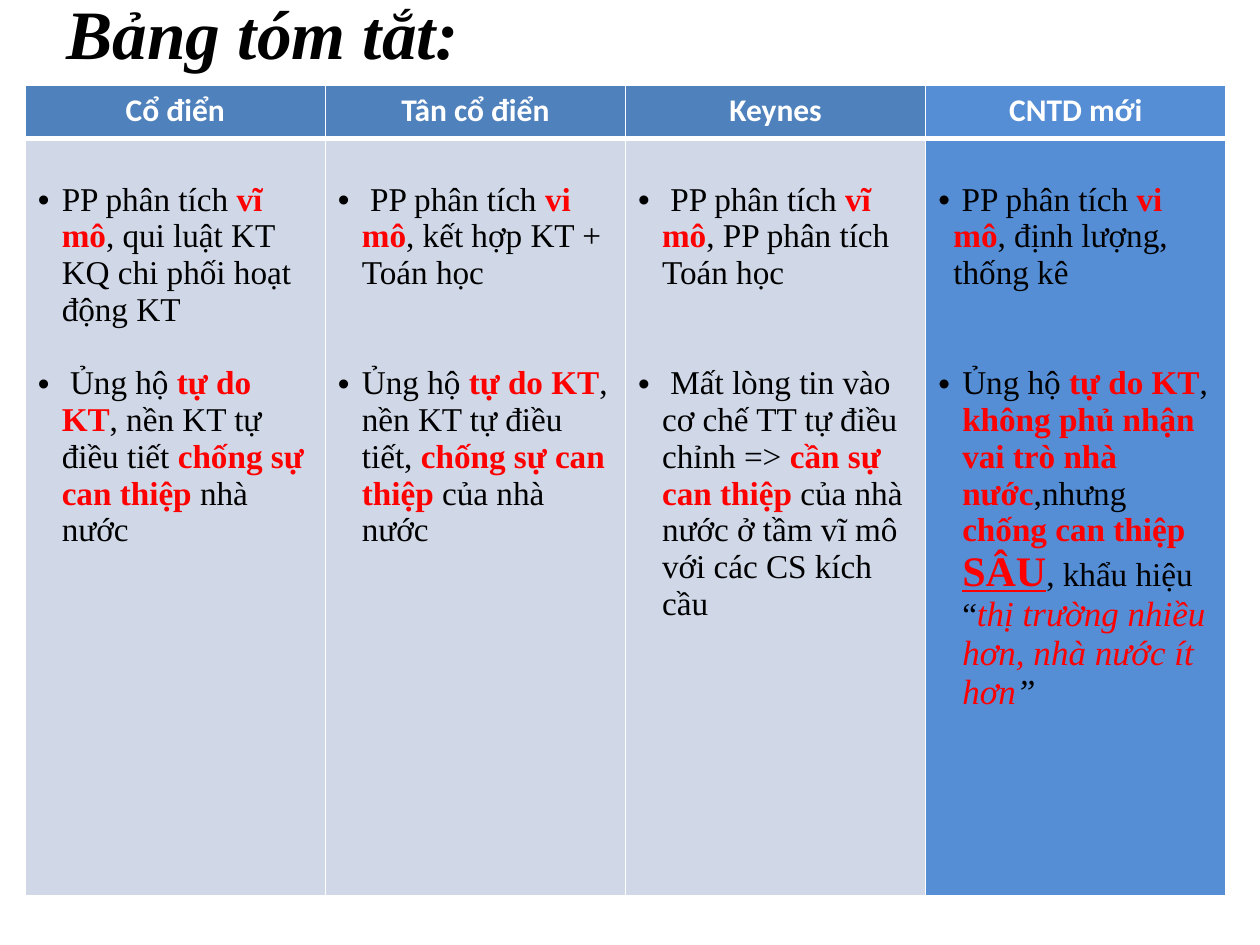
from lxml import etree
from pptx import Presentation
from pptx import util as u
from pptx.dml.color import RGBColor
from pptx.enum import text
from pptx.oxml.ns import qn

COLORS = {
    "black": "000000", "red": "FF0000", "white": "FFFFFF",
    "header": "4F81BD", "body": "D0D8E8", "accent": "558ED5",
}
STYLES = {
    "plain": {"color": "black"},
    "key": {"color": "red", "bold": True},
    "deep": {"color": "red", "bold": True, "underline": True, "size": 24},
    "slogan": {"color": "red", "italic": True, "size": 20},
    "quote": {"color": "black", "italic": True, "size": 20},
}
TITLE = "Bảng tóm tắt:"
SCHOOLS = [
    {"name": "Cổ điển", "fills": ("header", "body"), "indents": (0.19, 0.19), "gap_lines": 1,
     "points": [
         [("PP phân tích ", "plain"), ("vĩ mô", "key"),
          (", qui luật KT KQ chi phối hoạt động KT", "plain")],
         [(" Ủng hộ ", "plain"), ("tự do KT", "key"), (", nền KT tự điều tiết ", "plain"),
          ("chống sự can thiệp ", "key"), ("nhà nước", "plain")]]},
    {"name": "Tân cổ điển", "fills": ("header", "body"), "indents": (0.19, 0.19), "gap_lines": 2,
     "points": [
         [(" PP phân tích ", "plain"), ("vi mô", "key"), (", kết hợp KT + Toán học", "plain")],
         [("Ủng hộ ", "plain"), ("tự do KT", "key"), (", nền KT tự điều tiết, ", "plain"),
          ("chống sự can thiệp ", "key"), ("của nhà nước", "plain")]]},
    {"name": "Keynes", "fills": ("header", "body"), "indents": (0.19, 0.19), "gap_lines": 2,
     "points": [
         [(" PP phân tích ", "plain"), ("vĩ mô", "key"), (", PP phân tích Toán học", "plain")],
         [(" Mất lòng tin vào cơ chế TT tự điều chỉnh => ", "plain"),
          ("cần sự can thiệp ", "key"),
          ("của nhà nước ở tầm vĩ mô với các CS kích cầu", "plain")]]},
    {"name": "CNTD mới", "fills": ("accent", "accent"), "indents": (0.12, 0.19), "gap_lines": 2,
     "points": [
         [(" PP phân tích ", "plain"), ("vi mô", "key"), (", định lượng, thống kê", "plain")],
         [("Ủng hộ ", "plain"), ("tự do KT", "key"), (", ", "plain"),
          ("không phủ nhận vai trò nhà nước", "key"), (",nhưng ", "plain"),
          ("chống can thiệp ", "key"), ("SÂU", "deep"), (", khẩu hiệu “", "plain"),
          ("thị trường nhiều hơn, nhà nước ít hơn", "slogan"), ("”", "quote")]]},
]
SERIF, SANS = "Times New Roman", "Calibri"
BODY_SIZE, LINE_PITCH = 19, 21
ROW_HEIGHTS = (0.42, 6.01)


def rgb(name):
    return RGBColor.from_string(COLORS[name])


def set_font(font, face, size, color, bold=False, italic=False, underline=False):
    font.name, font.size = face, u.Pt(size)
    font.bold, font.italic, font.underline = bold, italic, underline
    font.color.rgb = rgb(color)


def paint(cell, fill, bottom):
    props = cell._tc.get_or_add_tcPr()
    for side, width in (("L", 1), ("R", 1), ("T", 1), ("B", bottom)):
        line = etree.SubElement(props, qn(f"a:ln{side}"), w=str(u.Pt(width)))
        solid = etree.SubElement(line, qn("a:solidFill"))
        etree.SubElement(solid, qn("a:srgbClr"), val=COLORS["white"])
    cell.fill.solid()
    cell.fill.fore_color.rgb = rgb(fill)


def add_bullet(paragraph, indent):
    props = paragraph._p.get_or_add_pPr()
    props.set("marL", str(u.Inches(indent)))
    props.set("indent", str(-u.Inches(indent)))
    etree.SubElement(props, qn("a:buFont"), typeface="Arial")
    etree.SubElement(props, qn("a:buChar"), char="•")


def write_title(slide):
    box = slide.shapes.add_textbox(u.Inches(0.43), 0, u.Inches(9), u.Inches(0.51))
    frame = box.text_frame
    frame.word_wrap = True
    frame.vertical_anchor = text.MSO_ANCHOR.MIDDLE
    heading = frame.paragraphs[0]
    heading.text = TITLE
    set_font(heading.font, SERIF, 39.6, "black", bold=True, italic=True)


def write_header(cell, school):
    heading = cell.text_frame.paragraphs[0]
    heading.text = school["name"]
    heading.alignment = text.PP_ALIGN.CENTER
    set_font(heading.font, SANS, 18, "white", bold=True)
    paint(cell, school["fills"][0], bottom=3)


def write_points(cell, school):
    cell.margin_top = u.Inches(0.05) + u.Pt(LINE_PITCH)
    frame = cell.text_frame
    for i, (point, indent) in enumerate(zip(school["points"], school["indents"])):
        paragraph = frame.add_paragraph() if i else frame.paragraphs[0]
        paragraph.space_before = u.Pt(LINE_PITCH * school["gap_lines"] * i)
        add_bullet(paragraph, indent)
        for words, style in point:
            run = paragraph.add_run()
            run.text = words
            set_font(run.font, SERIF, **{"size": BODY_SIZE, **STYLES[style]})
    paint(cell, school["fills"][1], bottom=1)


def main():
    deck = Presentation()
    deck.slide_width, deck.slide_height = u.Inches(10), u.Inches(7.5)
    slide = deck.slides.add_slide(deck.slide_layouts[6])
    write_title(slide)
    summary = slide.shapes.add_table(
        len(ROW_HEIGHTS), len(SCHOOLS), u.Inches(0.2), u.Inches(0.68),
        u.Inches(9.53), u.Inches(sum(ROW_HEIGHTS))).table
    summary.horz_banding = False
    for row, height in zip(summary.rows, ROW_HEIGHTS):
        row.height = u.Inches(height)
    for column, school in enumerate(SCHOOLS):
        write_header(summary.cell(0, column), school)
        write_points(summary.cell(1, column), school)
    deck.save("out.pptx")


if __name__ == "__main__":
    main()
